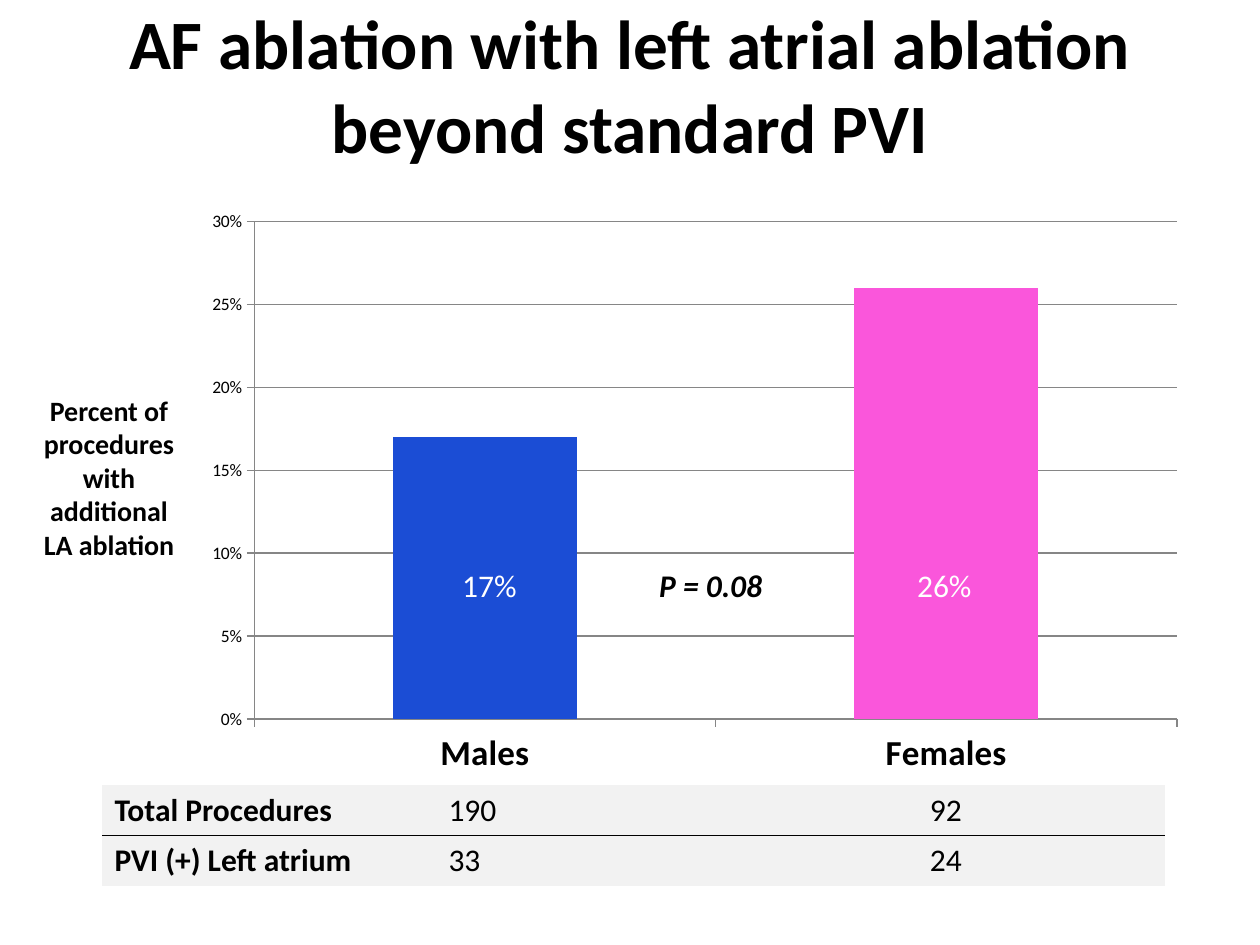
from lxml import etree
from pptx import Presentation
from pptx.chart.data import CategoryChartData
from pptx.dml.color import RGBColor
from pptx.enum.chart import XL_CHART_TYPE, XL_TICK_MARK
from pptx.enum.text import MSO_ANCHOR, PP_ALIGN
from pptx.oxml import parse_xml
from pptx.oxml.ns import nsdecls, qn
from pptx.util import Inches, Pt

COLUMN = XL_CHART_TYPE.COLUMN_CLUSTERED
OUTSIDE = XL_TICK_MARK.OUTSIDE
MIDDLE = MSO_ANCHOR.MIDDLE
LEFT, CENTER = PP_ALIGN.LEFT, PP_ALIGN.CENTER

FONT = "Calibri"
BLACK = RGBColor(0x00, 0x00, 0x00)
WHITE = RGBColor(0xFF, 0xFF, 0xFF)
GREY = RGBColor(0x86, 0x86, 0x86)
PALE = RGBColor(0xF2, 0xF2, 0xF2)
BLUE = RGBColor(0x1B, 0x4D, 0xD5)
PINK = RGBColor(0xFA, 0x56, 0xDB)
PLAIN_STYLE = "{2D5ABB26-0587-4C30-8999-92F81FD0307C}"

TITLE = "AF ablation with left atrial ablation beyond standard PVI"
BARS = [("Males", 0.17, BLUE), ("Females", 0.26, PINK)]
PLOT = {"x": 0.06, "y": 0.04, "w": 0.92, "h": 0.85}
ROWS = [("Total Procedures", "190", "92"),
        ("PVI (+) Left atrium", "33", "24")]
WIDTHS = (2.65, 3.82, 1.97)
NOTES = [
    ("17%", (3.12, 4.44, 1.53, 0.4), {"color": WHITE}),
    ("26%", (6.78, 4.44, 1.43, 0.4), {"color": WHITE}),
    ("P = 0.08", (4.5, 4.44, 2.28, 0.4), {"bold": True, "italic": True}),
    ("Percent of procedures with additional LA ablation",
     (0.19, 3.07, 1.35, 1.45), {"size": 16, "bold": True}),
]


def write(frame, text, size=18, color=BLACK, bold=False, italic=False,
          align=CENTER):
    frame.word_wrap = True
    para = frame.paragraphs[0]
    para.alignment = align
    run = para.add_run()
    run.text = text
    font = run.font
    font.name, font.size, font.color.rgb = FONT, Pt(size), color
    font.bold, font.italic = bold, italic


def box(lengths):
    return [Inches(n) for n in lengths]


def add_title(slide):
    title = slide.shapes.title
    title.left, title.top, title.width, title.height = box((0.5, 0.04, 9, 1.25))
    title.text_frame.vertical_anchor = MIDDLE
    write(title.text_frame, TITLE, size=39.6, bold=True)


def place_plot(chart):
    """Fix the inner plot area as fractions of the chart."""
    area = chart.plots[0]._element.getparent()
    for old in area.findall(qn("c:layout")):
        area.remove(old)
    layout = parse_xml(f"<c:layout {nsdecls('c')}><c:manualLayout/></c:layout>")
    settings = {"layoutTarget": "inner", "xMode": "edge", "yMode": "edge", **PLOT}
    for name, value in settings.items():
        etree.SubElement(layout[0], qn(f"c:{name}")).set("val", str(value))
    area.insert(0, layout)


def add_bars(slide):
    data = CategoryChartData(number_format="0%")
    data.categories = [name for name, _, _ in BARS]
    data.add_series("Series 1", [value for _, value, _ in BARS])
    chart = slide.shapes.add_chart(
        COLUMN, *box((1.54, 1.57, 7.96, 4.65)), data).chart
    chart.has_legend = chart.has_title = False
    font = chart.font
    font.name, font.size, font.color.rgb = FONT, Pt(10), BLACK

    plot = chart.plots[0]
    plot.gap_width = 150
    plot.vary_by_categories = False
    for i, (_, _, color) in enumerate(BARS):
        fill = plot.series[0].points[i].format.fill
        fill.solid()
        fill.fore_color.rgb = color

    cats, vals = chart.category_axis, chart.value_axis
    vals.minimum_scale, vals.maximum_scale, vals.major_unit = 0, 0.3, 0.05
    vals.tick_labels.number_format = "0%"
    vals.tick_labels.number_format_is_linked = False
    vals.has_major_gridlines = True
    for axis in (cats, vals):
        axis.major_tick_mark = OUTSIDE
    for part in (cats, vals, vals.major_gridlines):
        part.format.line.color.rgb = GREY
        part.format.line.width = Pt(0.75)
    font = cats.tick_labels.font
    font.name, font.size, font.bold, font.color.rgb = FONT, Pt(20), True, BLACK
    place_plot(chart)


def rule(cell, side):
    """Draw a thin black border on one side (T or B) of a cell."""
    cell._tc.get_or_add_tcPr().insert(0, parse_xml(
        f'<a:ln{side} {nsdecls("a")} w="12700"><a:solidFill>'
        f'<a:srgbClr val="{BLACK}"/></a:solidFill></a:ln{side}>'))


def add_counts(slide):
    table = slide.shapes.add_table(
        len(ROWS), len(WIDTHS), *box((0.81, 6.23, 8.44, 0.8))).table
    table.first_row = table.horz_banding = False
    table._tbl.tblPr.find(qn("a:tableStyleId")).text = PLAIN_STYLE
    for col, width in zip(table.columns, WIDTHS):
        col.width = Inches(width)
    for r, (row, side) in enumerate(zip(ROWS, "BT")):
        for c, text in enumerate(row):
            cell = table.cell(r, c)
            write(cell.text_frame, text, bold=c == 0, align=LEFT)
            cell.fill.solid()
            cell.fill.fore_color.rgb = PALE
            rule(cell, side)


def main():
    deck = Presentation()
    deck.slide_width, deck.slide_height = Inches(10), Inches(7.5)
    slide = deck.slides.add_slide(deck.slide_layouts[5])
    add_title(slide)
    add_bars(slide)
    for text, place, style in NOTES:
        write(slide.shapes.add_textbox(*box(place)).text_frame, text, **style)
    add_counts(slide)
    deck.save("out.pptx")


if __name__ == "__main__":
    main()
